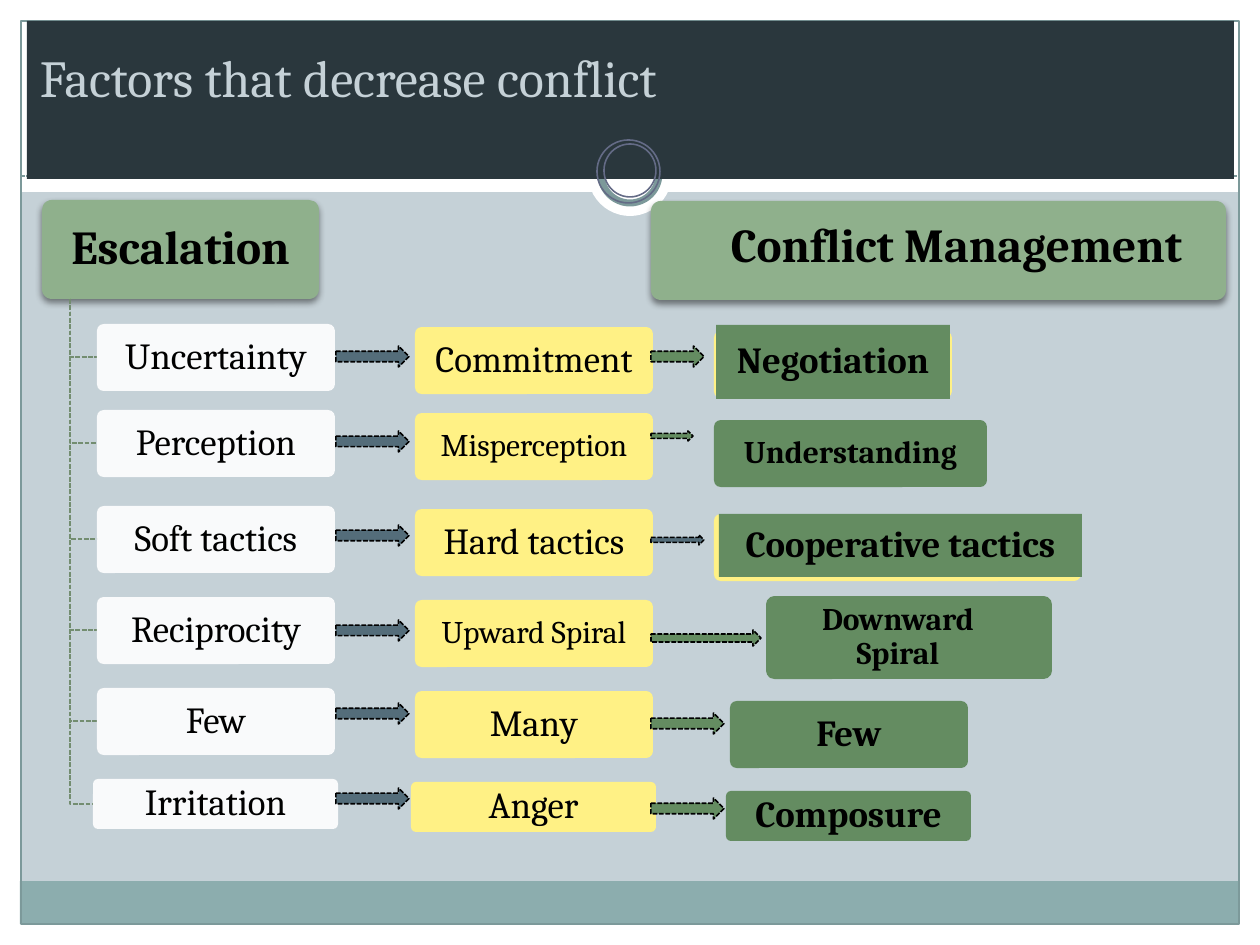
from dataclasses import dataclass
from typing import Optional

from lxml import etree
from pptx import Presentation
from pptx import util as u
from pptx.dml.color import RGBColor
from pptx.enum import dml, shapes, text
from pptx.oxml.ns import qn

PX = 914400 / 126  # EMU in one px
FONT = "Cambria"
WHITE, BLACK, SAGE, GREEN = "FFFFFF", "000000", "8FB08C", "648C61"
YELLOW, SLATE, FRAME, MIST = "FFF185", "546D7A", "7C999A", "C5D1D7"
RECT = shapes.MSO_SHAPE.RECTANGLE
ROUND = shapes.MSO_SHAPE.ROUNDED_RECTANGLE
OVAL = shapes.MSO_SHAPE.OVAL
ARROW = shapes.MSO_SHAPE.RIGHT_ARROW


@dataclass(frozen=True)
class Box:
    left: int
    top: int
    width: int
    height: int


@dataclass(frozen=True)
class Arrow:
    top: int
    width: int = 73
    height: int = 21
    fill: str = GREEN


@dataclass(frozen=True)
class Outcome:
    label: str
    box: Box
    arrow: Arrow
    size: int = 21
    face: Optional[Box] = None  # square green face on a yellow plate
    insets: tuple = (7, 5, 7, 5)


@dataclass(frozen=True)
class Factor:
    label: str
    box: Box
    arrow_top: int
    escalated: str
    escalated_size: int
    outcome: Outcome


FACTORS = [
    Factor("Uncertainty", Box(97, 324, 238, 67), 346, "Commitment", 21,
           Outcome("Negotiation", Box(714, 331, 238, 67), Arrow(346, 53),
                   face=Box(716, 325, 234, 74))),
    Factor("Perception", Box(97, 410, 238, 67), 431, "Misperception", 18,
           Outcome("Understanding", Box(714, 420, 273, 67), Arrow(431, 42, 10), 18)),
    Factor("Soft tactics", Box(97, 506, 238, 67), 525, "Hard tactics", 21,
           Outcome("Cooperative tactics", Box(714, 514, 367, 67),
                   Arrow(535, 53, 10, SLATE), face=Box(719, 514, 363, 63),
                   insets=(0, 0, 0, 0))),
    Factor("Reciprocity", Box(97, 597, 238, 67), 620, "Upward Spiral", 18,
           Outcome("Downward Spiral", Box(766, 596, 286, 83), Arrow(630, 110, 16), 18,
                   insets=(20, 5, 42, 5))),
    Factor("Few", Box(97, 688, 238, 67), 703, "Many", 21,
           Outcome("Few", Box(730, 701, 238, 67), Arrow(713))),
    Factor("Irritation", Box(93, 779, 245, 50), 788, "Anger", 21,
           Outcome("Composure", Box(726, 791, 245, 50), Arrow(798))),
]


def px(length: float) -> int:
    return round(length * PX)


def color(value: str) -> RGBColor:
    return RGBColor.from_string(value)


def place(shape, box: Box) -> None:
    shape.left, shape.top = px(box.left), px(box.top)
    shape.width, shape.height = px(box.width), px(box.height)


def paint(shape, fill: Optional[str], line: Optional[str] = None,
          weight: float = 0.9, dashed: bool = False) -> None:
    shape.shadow.inherit = False
    if fill:
        shape.fill.solid()
        shape.fill.fore_color.rgb = color(fill)
    else:
        shape.fill.background()
    if line:
        stroke(shape.line, line, weight, dashed)
    else:
        shape.line.fill.background()


def stroke(line, value: str, weight: float, dashed: bool) -> None:
    line.color.rgb = color(value)
    line.width = u.Pt(weight)
    if dashed:
        line.dash_style = dml.MSO_LINE.SQUARE_DOT


def draw(slide, kind, box: Box, fill: Optional[str], line: Optional[str] = None,
         weight: float = 0.9, dashed: bool = False):
    shape = slide.shapes.add_shape(kind, 0, 0, 0, 0)
    place(shape, box)
    if kind == ROUND:
        shape.adjustments[0] = 0.1
    paint(shape, fill, line, weight, dashed)
    return shape


def write(shape, words: str, size: float, bold: bool = False, ink: str = BLACK,
          insets: tuple = (7, 5, 7, 5), align=text.PP_ALIGN.CENTER) -> None:
    frame = shape.text_frame
    frame.text = words
    frame.word_wrap = True
    frame.auto_size = text.MSO_AUTO_SIZE.NONE
    frame.vertical_anchor = text.MSO_ANCHOR.MIDDLE
    (frame.margin_left, frame.margin_top,
     frame.margin_right, frame.margin_bottom) = map(px, insets)
    paragraph = frame.paragraphs[0]
    paragraph.alignment = align
    paragraph.line_spacing = 0.9
    font = paragraph.runs[0].font
    font.name, font.size, font.bold = FONT, u.Pt(size), bold
    font.color.rgb = color(ink)


def fade(shape, percent: int) -> None:
    tint = shape.fill._xPr.find(qn("a:solidFill")).find(qn("a:srgbClr"))
    etree.SubElement(tint, qn("a:alpha"), val=str(percent * 1000))


def draw_heading(slide, words: str, box: Box, insets: tuple) -> None:
    heading = draw(slide, ROUND, box, SAGE)
    effects = heading._element.spPr.find(qn("a:effectLst"))
    shadow = etree.SubElement(effects, qn("a:outerShdw"), blurRad=str(u.Pt(4)),
                              dist=str(u.Pt(2)), dir="5400000", rotWithShape="0")
    tint = etree.SubElement(shadow, qn("a:srgbClr"), val=BLACK)
    etree.SubElement(tint, qn("a:alpha"), val="45000")
    write(heading, words, 27, True, insets=insets)


def draw_arrow(slide, left: int, arrow: Arrow) -> None:
    draw(slide, ARROW, Box(left, arrow.top, arrow.width, arrow.height),
         arrow.fill, BLACK, dashed=True)


def draw_branch(slide, box: Box) -> None:
    middle = box.top + box.height // 2
    outline = slide.shapes.build_freeform(70, 299, scale=PX)
    outline.add_line_segments([(70, middle), (box.left, middle)], close=False)
    paint(outline.convert_to_shape(), None, "738D70", dashed=True)


def draw_factor(slide, factor: Factor) -> None:
    box, outcome = factor.box, factor.outcome
    # Starting state, hanging from the Escalation heading
    draw_branch(slide, box)
    start = draw(slide, ROUND, box, WHITE)
    fade(start, 90)
    write(start, factor.label, 21)
    # What it escalates to
    escalated = draw(slide, ROUND, Box(box.left + 318, box.top + 3, box.width, box.height), YELLOW)
    write(escalated, factor.escalated, factor.escalated_size)
    draw_arrow(slide, 336, Arrow(factor.arrow_top, fill=SLATE))
    # How conflict management answers it
    managed = draw(slide, ROUND, outcome.box, YELLOW if outcome.face else GREEN)
    if outcome.face:
        managed = draw(slide, RECT, outcome.face, GREEN)
    write(managed, outcome.label, outcome.size, True, insets=outcome.insets)
    draw_arrow(slide, 651, outcome.arrow)


def draw_backdrop(slide) -> None:
    slide.background.fill.solid()
    slide.background.fill.fore_color.rgb = color(MIST)
    for border in (Box(0, 924, 1260, 21), Box(0, 0, 1260, 192),
                   Box(0, 0, 21, 945), Box(1239, 0, 21, 945)):
        draw(slide, RECT, border, WHITE)
    draw(slide, RECT, Box(20, 881, 1218, 43), "8CADAE")
    draw(slide, RECT, Box(21, 21, 1218, 903), None, FRAME, 0.75)
    rule = slide.shapes.add_connector(shapes.MSO_CONNECTOR.STRAIGHT,
                                      px(21), px(176), px(1239), px(176))
    stroke(rule.line, FRAME, 0.75, True)
    etree.SubElement(rule._element.spPr, qn("a:effectLst"))
    draw(slide, OVAL, Box(588, 132, 84, 84), WHITE)
    draw(slide, OVAL, Box(601, 145, 58, 58), WHITE, FRAME, 4)


def main() -> None:
    deck = Presentation()
    deck.slide_width, deck.slide_height = px(1260), px(945)
    slide = deck.slides.add_slide(deck.slide_layouts[5])
    draw_backdrop(slide)

    # Title band, in front of the backdrop
    title = slide.shapes.title
    slide.shapes._spTree.append(title._element)
    place(title, Box(27, 21, 1207, 158))
    paint(title, "2A373D")
    write(title, "Factors that decrease conflict", 29.7, ink=MIST,
          insets=(13, 0, 13, 38), align=text.PP_ALIGN.LEFT)

    # Thin rings over the band's lower edge
    for ring in (Box(597, 140, 63, 63), Box(604, 144, 52, 53)):
        draw(slide, OVAL, ring, None, "646B86")

    draw_heading(slide, "Escalation", Box(42, 200, 277, 99), (8, 5, 8, 5))
    draw_heading(slide, "Conflict Management", Box(651, 201, 575, 99), (44, 0, 8, 7))
    for factor in FACTORS:
        draw_factor(slide, factor)
    deck.save("out.pptx")


if __name__ == "__main__":
    main()
